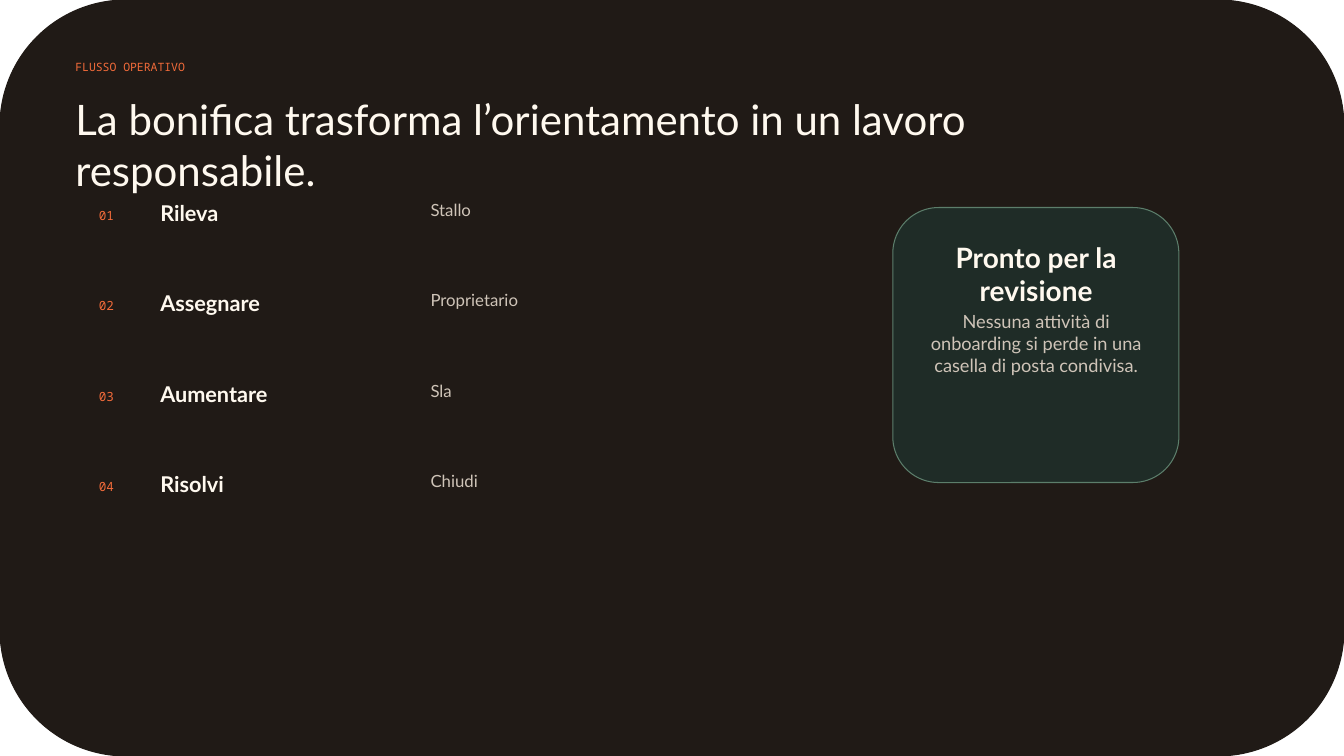
from pptx import Presentation
from pptx.dml.color import RGBColor
from pptx.enum.shapes import MSO_SHAPE
from pptx.enum.text import PP_ALIGN
from pptx.util import Cm, Pt

ROUND = MSO_SHAPE.ROUNDED_RECTANGLE
LEFT = PP_ALIGN.LEFT
CENTER = PP_ALIGN.CENTER

WIDTH, HEIGHT = 33.87, 19.05
TOP, PITCH = 5.03, 2.28
STEPS = [
    ("Rileva", "Stallo"),
    ("Assegnare", "Proprietario"),
    ("Aumentare", "Sla"),
    ("Risolvi", "Chiudi"),
]


def color(code):
    return RGBColor.from_string(code)


class Deck:
    sans, mono = "Lato", "Noto Sans Mono"
    dark, green, edge = "201A16", "1F2C27", "5C7E6B"
    cream, sand, orange = "FFF9EF", "CFC4B8", "F26B3A"

    def __init__(self):
        self.prs = Presentation()
        self.prs.slide_width = Cm(WIDTH)
        self.prs.slide_height = Cm(HEIGHT)
        self.slide = self.prs.slides.add_slide(self.prs.slide_layouts[6])

    def panel(self, box, fill, line, weight):
        shape = self.slide.shapes.add_shape(ROUND, *map(Cm, box))
        shape.shadow.inherit = False
        shape.fill.solid()
        shape.fill.fore_color.rgb = color(fill)
        shape.line.color.rgb = color(line)
        shape.line.width = Pt(weight)

    def text(self, box, words, size, tone, face=sans, bold=False, align=LEFT):
        frame = self.slide.shapes.add_textbox(*map(Cm, box)).text_frame
        frame.word_wrap = True
        frame.margin_left = frame.margin_right = 0
        frame.margin_top = frame.margin_bottom = 0
        frame.text = words
        para = frame.paragraphs[0]
        para.alignment = align
        font = para.runs[0].font
        font.name = face
        font.size = Pt(size)
        font.bold = bold
        font.color.rgb = color(tone)

    def step(self, index, name, note):
        top = TOP + index * PITCH
        self.text((2.49, top + 0.2, 1.4, 0.61), f"{index + 1:02}", 9,
                  self.orange, self.mono)
        self.text((4.04, top, 7.21, 0.71), name, 15.5, self.cream, bold=True)
        self.text((10.85, top, 10, 0.79), note, 12, self.sand)


def main():
    deck = Deck()
    deck.panel((0, 0, WIDTH, HEIGHT), deck.dark, deck.dark, 0)
    deck.text((1.9, 1.52, 11.66, 0.71), "FLUSSO OPERATIVO", 8.2,
              deck.orange, deck.mono)
    deck.text((1.9, 2.36, 23.9, 1.8),
              "La bonifica trasforma l’orientamento in un lavoro responsabile.",
              30, deck.cream)
    for index, (name, note) in enumerate(STEPS):
        deck.step(index, name, note)
    deck.panel((22.5, 5.23, 7.21, 6.93), deck.green, deck.edge, 0.75)
    deck.text((23.19, 6.05, 5.84, 1.17), "Pronto per la revisione", 20,
              deck.cream, bold=True, align=CENTER)
    deck.text((23.19, 7.82, 5.84, 2.49),
              "Nessuna attività di onboarding si perde in una casella "
              "di posta condivisa.", 13, deck.sand, align=CENTER)
    deck.prs.save("out.pptx")


if __name__ == "__main__":
    main()
